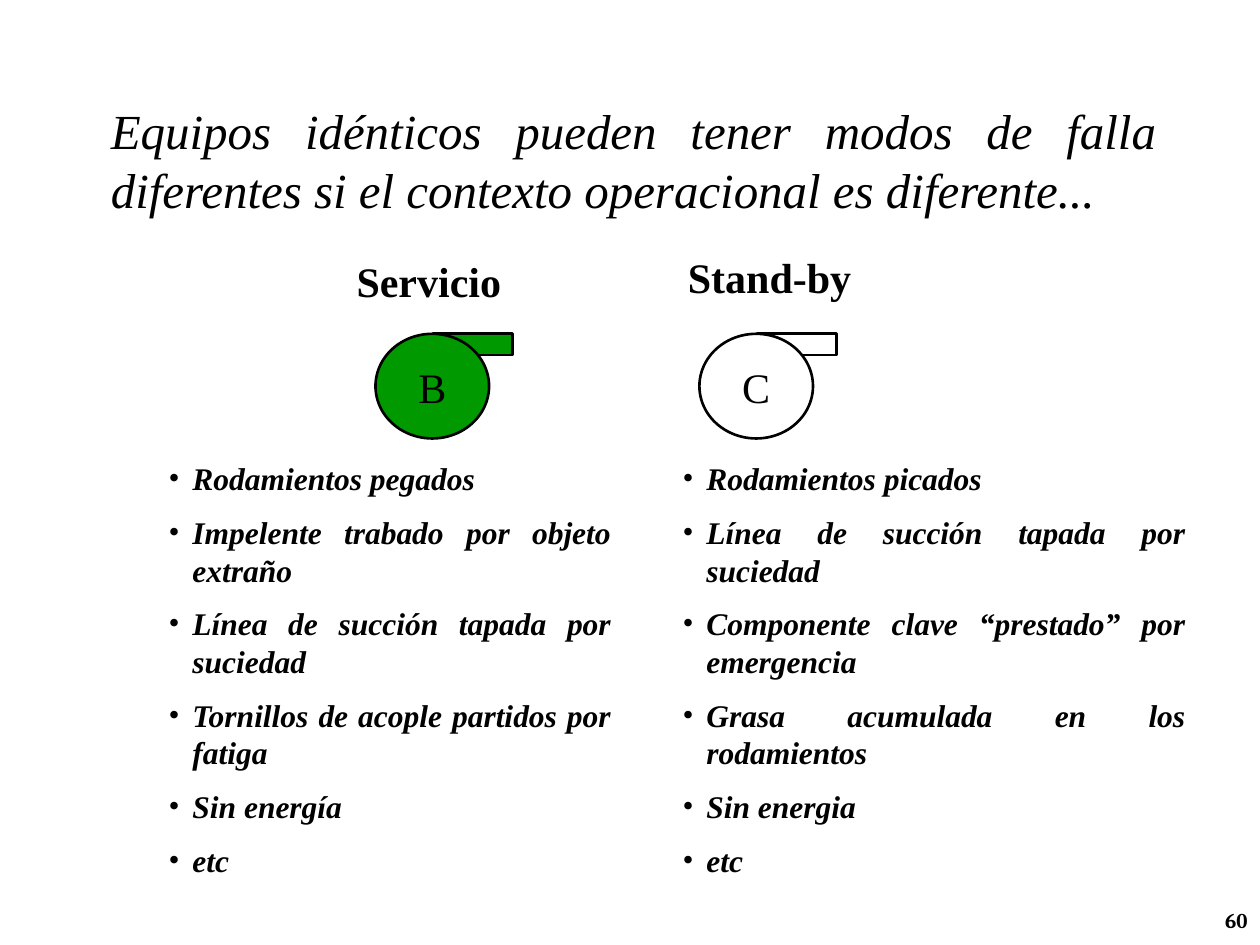
from lxml import etree
from pptx import Presentation
from pptx.dml.color import RGBColor
from pptx.enum.shapes import MSO_SHAPE
from pptx.enum.text import MSO_ANCHOR, MSO_AUTO_SIZE, PP_ALIGN
from pptx.oxml.ns import qn
from pptx.util import Cm, Pt

RECT, OVAL = MSO_SHAPE.RECTANGLE, MSO_SHAPE.OVAL
MIDDLE = MSO_ANCHOR.MIDDLE
NO_FIT = MSO_AUTO_SIZE.NONE
LEFT, CENTER, RIGHT, JUSTIFY = PP_ALIGN.LEFT, PP_ALIGN.CENTER, PP_ALIGN.RIGHT, PP_ALIGN.JUSTIFY
SERIF = "Times New Roman"
BLACK, WHITE, GREEN = "000000", "FFFFFF", "009900"

TITLE = ("Equipos idénticos pueden tener modos de falla diferentes "
         "si el contexto operacional es diferente...")
SERVICE_FAILURES = [
    "Rodamientos pegados",
    "Impelente trabado por objeto extraño",
    "Línea de succión tapada por suciedad",
    "Tornillos de acople partidos por fatiga",
    "Sin energía",
    "etc",
]
STANDBY_FAILURES = [
    "Rodamientos picados",
    "Línea de succión tapada por suciedad",
    "Componente clave “prestado” por emergencia",
    "Grasa acumulada en los rodamientos",
    "Sin energia",
    "etc",
]


def rgb(color):
    return RGBColor.from_string(color)


def place(sp, left, top, width, height):
    sp.left, sp.top, sp.width, sp.height = Cm(left), Cm(top), Cm(width), Cm(height)


def format_text(sp, size, align, bold=False, italic=False, font=SERIF, wrap=True):
    tf = sp.text_frame
    tf.word_wrap = wrap
    tf.auto_size = NO_FIT
    tf.vertical_anchor = MIDDLE
    for p in tf.paragraphs:
        p.alignment = align
        for r in p.runs:
            r.font.name = font
            r.font.size = Pt(size)
            r.font.bold = bold
            r.font.italic = italic
            r.font.color.rgb = rgb(BLACK)


def add_title(slide):
    sp = slide.shapes.title
    place(sp, 1.98, 1.63, 21.59, 3.18)
    sp.text_frame.text = TITLE
    format_text(sp, 28, JUSTIFY, italic=True)


def add_label(slide, text, box, size, align, font=SERIF):
    sp = slide.shapes.add_textbox(*map(Cm, box))
    sp.text_frame.text = text
    format_text(sp, size, align, bold=True, font=font, wrap=False)


def add_part(group, kind, box, color, outlined=True):
    sp = group.shapes.add_shape(kind, *map(Cm, box))
    sp.shadow.inherit = False
    sp.fill.solid()
    sp.fill.fore_color.rgb = rgb(color)
    if outlined:
        sp.line.color.rgb = rgb(BLACK)
        sp.line.width = Pt(1.5)
    else:
        sp.line.fill.background()
    return sp


def add_pump(slide, left, top, color, letter):
    group = slide.shapes.add_group_shape()
    add_part(group, RECT, (left + 1.16, top, 1.6, 0.43), color)
    add_part(group, OVAL, (left, top, 2.29, 2.11), color)
    sp = add_part(group, RECT, (left + 0.61, top + 0.43, 1.07, 1.27), color, False)
    sp.text_frame.text = letter
    format_text(sp, 24, CENTER, wrap=False)


def add_bullet(p):
    pPr = p._p.get_or_add_pPr()
    pPr.set("marL", str(Cm(0.48)))
    pPr.set("indent", str(-Cm(0.48)))
    etree.SubElement(pPr, qn("a:buFont")).set("typeface", SERIF)
    etree.SubElement(pPr, qn("a:buChar")).set("char", "•")


def add_failures(slide, items, left, width):
    sp = slide.shapes.add_textbox(Cm(left), Cm(8.94), Cm(width), Cm(9.09))
    tf = sp.text_frame
    tf.text = "\n".join(items)
    for i, p in enumerate(tf.paragraphs):
        add_bullet(p)
        p.space_before = Pt(9 if i else 0)
    format_text(sp, 18, JUSTIFY, bold=True, italic=True)


def main():
    prs = Presentation()
    prs.slide_width, prs.slide_height = Cm(25.4), Cm(19.05)
    slide = prs.slides.add_slide(prs.slide_layouts[5])
    add_title(slide)
    add_label(slide, "60", (23.62, 18.03, 1.78, 1.02), 12, RIGHT, "Cambria")
    add_pump(slide, 7.57, 6.73, GREEN, "B")
    add_pump(slide, 14.1, 6.73, WHITE, "C")
    add_label(slide, "Servicio", (6.93, 5.03, 3.43, 1.27), 24, CENTER)
    add_label(slide, "Stand-by", (13.61, 4.95, 3.81, 1.27), 24, CENTER)
    add_failures(slide, STANDBY_FAILURES, 13.51, 10.64)
    add_failures(slide, SERVICE_FAILURES, 3.15, 9.42)
    prs.save("out.pptx")


if __name__ == "__main__":
    main()
